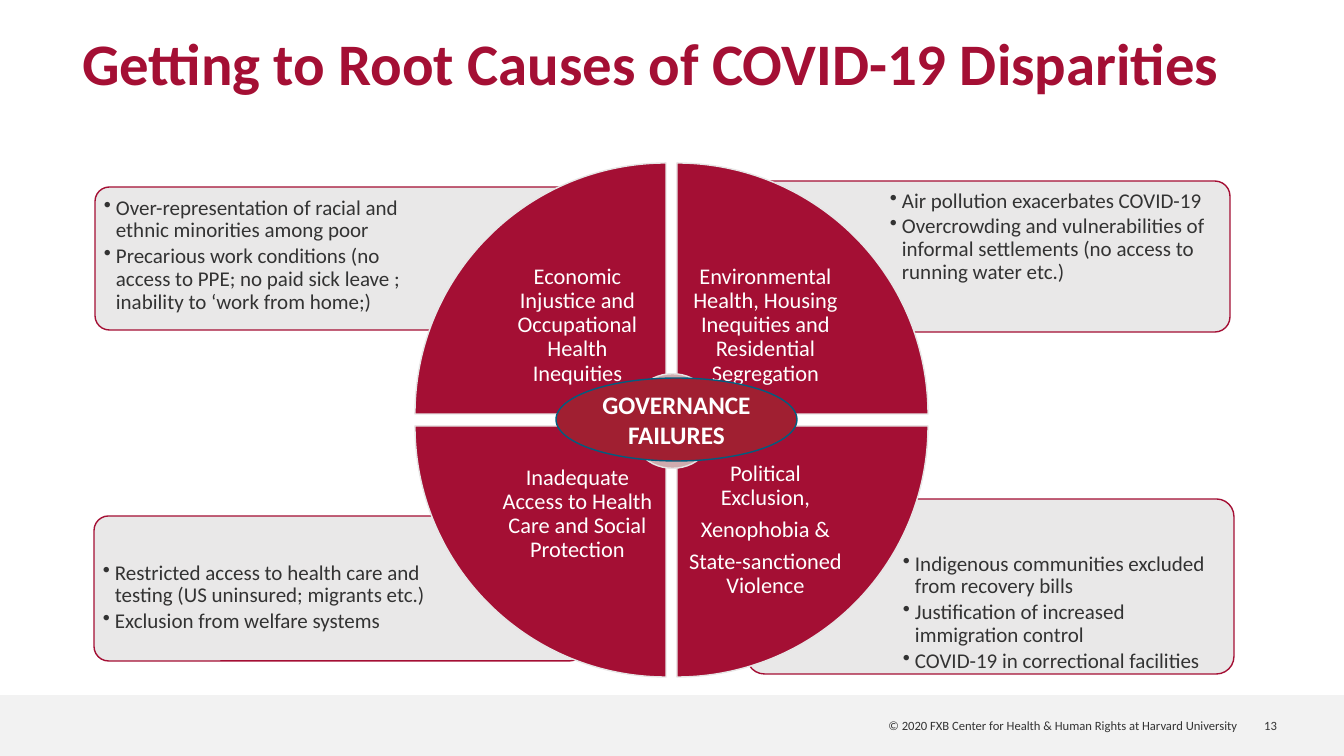
from lxml import etree
from pptx import Presentation
from pptx import util as u
from pptx.dml.color import RGBColor
from pptx.enum import shapes, text
from pptx.oxml.ns import qn

COLOURS = {
    "crimson": "A40F34", "oval": "A01F31", "navy": "015D7F", "arrow": "CFABAE",
    "card": "E7E6E6", "band": "F2F2F2", "ink": "333333", "white": "FFFFFF",
}
PX = 914400 / 100.8
SHAPE = shapes.MSO_SHAPE
ALIGN = text.PP_ALIGN
ANCHOR = text.MSO_ANCHOR

CARDS = [
    ((747, 499, 487, 175), (897, 547, 333, 124), [
        "Indigenous communities excluded from recovery bills",
        "Justification of increased immigration control",
        "COVID-19 in correctional facilities"]),
    ((94, 516, 490, 145), (97, 556, 337, 103), [
        "Restricted access to health care and testing (US uninsured; migrants etc.)",
        "Exclusion from welfare systems"]),
    ((730, 181, 500, 151), (884, 184, 344, 107), [
        "Air pollution exacerbates COVID-19",
        "Overcrowding and vulnerabilities of informal settlements "
        "(no access to running water etc.)"]),
    ((95, 187, 493, 143), (98, 191, 339, 101), [
        "Over-representation of racial and ethnic minorities among poor",
        "Precarious work conditions (no access to PPE; no paid sick leave ; "
        "inability to ‘work from home;)"]),
]
QUADRANTS = [
    (415, 163, 489, 237, ["Economic Injustice and Occupational Health Inequities"]),
    (677, 163, 677, 237, ["Environmental Health, Housing Inequities and Residential Segregation"]),
    (677, 426, 677, 442, ["Political Exclusion,", "Xenophobia &", "State-sanctioned Violence"]),
    (415, 426, 489, 426, ["Inadequate Access to Health Care and Social Protection"]),
]


def px(length):
    return u.Emu(round(length * PX))


def colour(name):
    return RGBColor.from_string(COLOURS[name])


def write(frame, lines, size, ink="ink", bold=False, align=ALIGN.LEFT, anchor=ANCHOR.TOP,
          inset=None, leading=None, after=0, bullet=False):
    frame.word_wrap = True
    frame.auto_size = text.MSO_AUTO_SIZE.NONE
    frame.vertical_anchor = anchor
    if inset is not None:
        frame.margin_left = frame.margin_right = px(inset)
        frame.margin_top = frame.margin_bottom = px(inset)
    for index, line in enumerate(lines):
        para = frame.add_paragraph() if index else frame.paragraphs[0]
        if bullet:
            properties = para._p.get_or_add_pPr()
            properties.set("marL", str(px(12)))
            properties.set("indent", str(px(-12)))
            etree.SubElement(properties, qn("a:buChar")).set("char", "•")
        para.alignment = align
        para.line_spacing = leading
        para.space_after = u.Pt(after)
        span = para.add_run()
        span.text = line
        font = span.font
        font.name, font.size, font.bold = "Calibri", u.Pt(size), bold
        font.color.rgb = colour(ink)


class Slide:
    """Hold the deck, its current page and the methods that draw on it."""

    def __init__(self):
        self.deck = Presentation()
        self.deck.slide_width, self.deck.slide_height = px(1344), px(756)
        self.page = self.deck.slides.add_slide(self.deck.slide_layouts[5])

    def title(self, place, line):
        box = self.page.shapes.title
        box.left, box.top, box.width, box.height = map(px, place)
        write(box.text_frame, [line], 42, ink="crimson", bold=True,
              align=ALIGN.CENTER, anchor=ANCHOR.MIDDLE)

    def shape(self, kind, place, fill, line=None, turn=0, alpha=None):
        shape = self.page.shapes.add_shape(kind, *map(px, place))
        shape.shadow.inherit = False
        shape.rotation = turn
        shape.fill.solid()
        shape.fill.fore_color.rgb = colour(fill)
        if alpha:
            tint = shape._element.spPr.find(qn("a:solidFill"))[0]
            etree.SubElement(tint, qn("a:alpha")).set("val", str(alpha * 1000))
        if line:
            shape.line.color.rgb = colour(line)
            shape.line.width = u.Pt(1)
        else:
            shape.line.fill.background()
        return shape

    def label(self, place, lines, size, **style):
        box = self.page.shapes.add_textbox(*map(px, place))
        write(box.text_frame, lines, size, **style)

    def card(self, place, text_place, lines):
        card = self.shape(SHAPE.ROUNDED_RECTANGLE, place, "card", "crimson", alpha=90)
        card.adjustments[0] = 0.1
        self.label(text_place, lines, 15, inset=6, leading=0.9, after=2.25, bullet=True)

    def quadrant(self, left, top, text_left, text_top, lines, turn):
        self.shape(SHAPE.PIE_WEDGE, (left, top, 251, 251), "crimson", "card", turn)
        self.label((text_left, text_top, 177, 177), lines, 16, ink="white", inset=12,
                   align=ALIGN.CENTER, anchor=ANCHOR.MIDDLE, leading=0.9, after=5.6)


def main():
    slide = Slide()
    slide.title((54, 21, 1193, 82), "Getting to Root Causes of COVID-19 Disparities")
    slide.shape(SHAPE.RECTANGLE, (0, 695, 1344, 61), "band")
    footer = "© 2020 FXB Center for Health & Human Rights at Harvard University"
    for left, width, line in [(761, 486, footer), (1247, 40, "13")]:
        slide.label((left, 695, width, 61), [line], 9, align=ALIGN.RIGHT, anchor=ANCHOR.MIDDLE)
    for card in CARDS:
        slide.card(*card)
    for index, quadrant in enumerate(QUADRANTS):
        slide.quadrant(*quadrant, turn=90 * index)
    for top, turn in [(369, 0), (397, 180)]:
        slide.shape(SHAPE.CIRCULAR_ARROW, (629, top, 87, 76), "arrow", "card", turn)
    oval = slide.shape(SHAPE.OVAL, (556, 378, 241, 83), "oval", "navy")
    write(oval.text_frame, ["GOVERNANCE FAILURES"], 18, ink="white", bold=True,
          align=ALIGN.CENTER, anchor=ANCHOR.MIDDLE)
    slide.deck.save("out.pptx")


if __name__ == "__main__":
    main()
